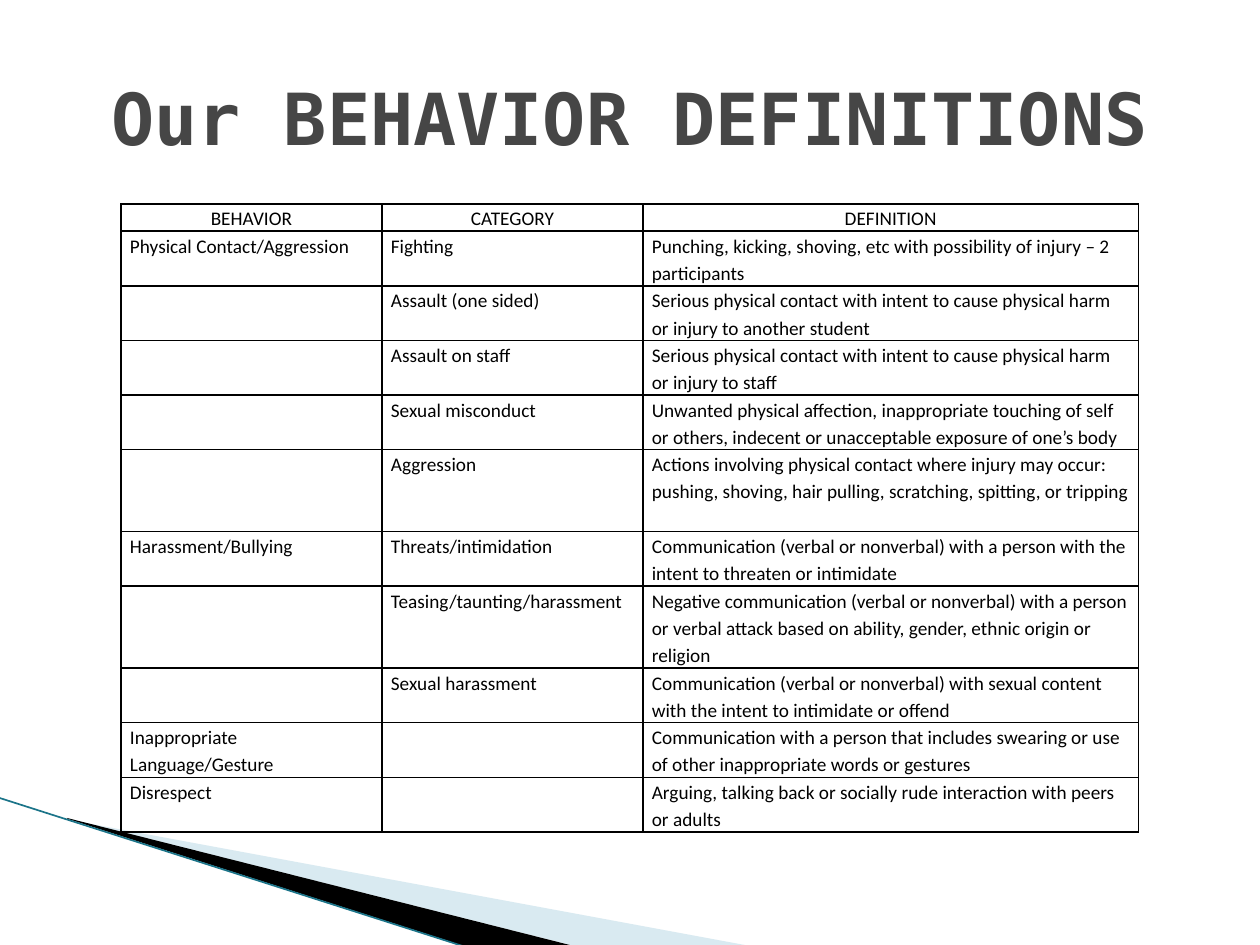
from lxml import etree
from pptx import Presentation
from pptx.dml.color import RGBColor
from pptx.enum.shapes import MSO_CONNECTOR
from pptx.enum.text import MSO_ANCHOR, MSO_AUTO_SIZE, PP_ALIGN
from pptx.oxml.ns import qn
from pptx.util import Cm, Pt

LINE = MSO_CONNECTOR.STRAIGHT
MIDDLE = MSO_ANCHOR.MIDDLE
NO_FIT = MSO_AUTO_SIZE.NONE
LEFT, CENTER = PP_ALIGN.LEFT, PP_ALIGN.CENTER

THEME = {
    "head": ("DejaVu Sans Mono", 41, "464646"),
    "cell": ("Calibri", 11, "000000"),
    "rule": "000000",
    "pale": "A0CBDC",
    "dark": "000000",
    "edge": "1B7489",
}

TITLE = "Our BEHAVIOR DEFINITIONS"
# Each row: behavior, category, definition, height in text lines
ROWS = [
    ("BEHAVIOR", "CATEGORY", "DEFINITION", 1),
    ("Physical Contact/Aggression", "Fighting",
     "Punching, kicking, shoving, etc with possibility of injury – 2 participants", 2),
    ("", "Assault (one sided)",
     "Serious physical contact with intent to cause physical harm or injury to another student", 2),
    ("", "Assault on staff",
     "Serious physical contact with intent to cause physical harm or injury to staff", 2),
    ("", "Sexual misconduct",
     "Unwanted physical affection, inappropriate touching of self or others, "
     "indecent or unacceptable exposure of one’s body", 2),
    ("", "Aggression",
     "Actions involving physical contact where injury may occur: "
     "pushing, shoving, hair pulling, scratching, spitting, or tripping", 3),
    ("Harassment/Bullying", "Threats/intimidation",
     "Communication (verbal or nonverbal) with a person with the "
     "intent to threaten or intimidate", 2),
    ("", "Teasing/taunting/harassment",
     "Negative communication (verbal or nonverbal) with a person or verbal attack "
     "based on ability, gender, ethnic origin or religion", 3),
    ("", "Sexual harassment",
     "Communication (verbal or nonverbal) with sexual content "
     "with the intent to intimidate or offend", 2),
    ("Inappropriate Language/Gesture", "",
     "Communication with a person that includes swearing or use "
     "of other inappropriate words or gestures", 2),
    ("Disrespect", "",
     "Arguing, talking back or socially rude interaction with peers or adults", 2),
]
# Corner wedges: colour, opacity in percent, corners in cm
WEDGES = [
    ("pale", 40, [(1.4, 16.53), (15.12, 19.07), (11.58, 19.07), (1.4, 16.51)]),
    ("dark", 100, [(1.35, 16.49), (11.6, 19.08), (9.45, 19.1), (1.37, 16.51)]),
]
EDGE = (-0.03, 16.08, 9.42, 19.1)
COLS = (5.26, 5.26, 9.99)
LINE_H = 0.55


def style(par, key, align, bold=False):
    face, size, tint = THEME[key]
    par.alignment = align
    for run in par.runs:
        run.font.name = face
        run.font.size = Pt(size)
        run.font.bold = bold
        run.font.color.rgb = RGBColor.from_string(tint)


def add_wedge(slide, key, alpha, spots):
    first, *rest = [(Cm(x), Cm(y)) for x, y in spots]
    pen = slide.shapes.build_freeform(*first)
    pen.add_line_segments(rest, close=True)
    wedge = pen.convert_to_shape()
    wedge.shadow.inherit = False
    wedge.line.fill.background()
    wedge.fill.solid()
    wedge.fill.fore_color.rgb = RGBColor.from_string(THEME[key])
    if alpha < 100:
        tint = wedge.fill._xPr.find(".//" + qn("a:srgbClr"))
        etree.SubElement(tint, qn("a:alpha")).set("val", str(alpha * 1000))


def add_edge(slide):
    edge = slide.shapes.add_connector(LINE, *map(Cm, EDGE))
    edge.line.color.rgb = RGBColor.from_string(THEME["edge"])
    edge.line.width = Pt(0.95)
    etree.SubElement(edge._element.spPr, qn("a:effectLst"))


def rule_cell(cell):
    """Draw a thin border on all four sides."""
    props = cell._tc.get_or_add_tcPr()
    for spot, side in enumerate("LRTB"):
        rule = etree.Element(qn("a:ln" + side), w=str(Pt(1)))
        fill = etree.SubElement(rule, qn("a:solidFill"))
        etree.SubElement(fill, qn("a:srgbClr"), val=THEME["rule"])
        props.insert(spot, rule)


def fill_cell(cell, text, align):
    cell.margin_left = cell.margin_right = Cm(0.18)
    cell.margin_top = cell.margin_bottom = 0
    cell.fill.background()
    cell.text = text
    par = cell.text_frame.paragraphs[0]
    par.line_spacing = 1.15
    style(par, "cell", align)
    rule_cell(cell)


def add_grid(slide):
    high = LINE_H * sum(row[-1] for row in ROWS)
    frame = slide.shapes.add_table(
        len(ROWS), len(COLS), Cm(2.44), Cm(4.11), Cm(sum(COLS)), Cm(high))
    grid = frame.table
    grid.first_row = grid.horz_banding = False
    for col, wide in zip(grid.columns, COLS):
        col.width = Cm(wide)
    for r, (*texts, lines) in enumerate(ROWS):
        grid.rows[r].height = Cm(LINE_H * lines)
        for c, text in enumerate(texts):
            fill_cell(grid.cell(r, c), text, LEFT if r else CENTER)


def set_title(slide):
    title = slide.shapes.title
    title.left, title.top = Cm(1.27), Cm(0.76)
    title.width, title.height = Cm(22.86), Cm(3.18)
    frame = title.text_frame
    frame.text = TITLE
    frame.word_wrap = True
    frame.auto_size = NO_FIT
    frame.vertical_anchor = MIDDLE
    style(frame.paragraphs[0], "head", CENTER, bold=True)


def main():
    deck = Presentation()
    deck.slide_width, deck.slide_height = Cm(25.4), Cm(19.05)
    slide = deck.slides.add_slide(deck.slide_layouts[5])
    set_title(slide)
    for wedge in WEDGES:
        add_wedge(slide, *wedge)
    add_edge(slide)
    add_grid(slide)
    deck.save("out.pptx")


if __name__ == "__main__":
    main()
